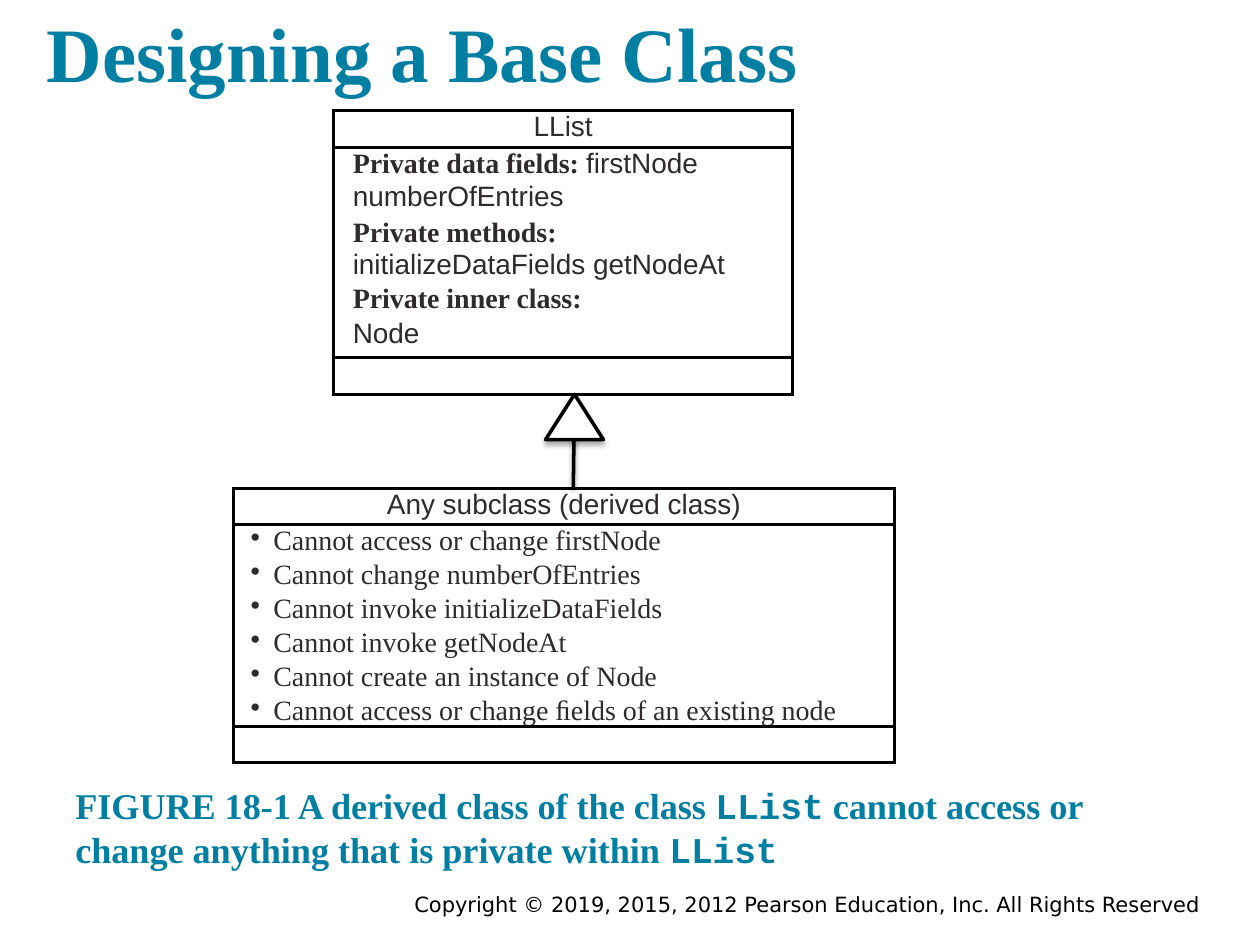
from lxml.etree import SubElement
from pptx import Presentation
from pptx.dml.color import RGBColor
from pptx.enum.shapes import MSO_CONNECTOR, MSO_SHAPE
from pptx.enum.text import MSO_ANCHOR, PP_ALIGN
from pptx.oxml.ns import qn
from pptx.util import Inches, Pt

TEAL = RGBColor(0x00, 0x7F, 0xA3)
INK = RGBColor(0x2F, 0x2A, 0x2B)
BLACK = RGBColor(0, 0, 0)
WHITE = RGBColor(0xFF, 0xFF, 0xFF)
SERIF, SANS, MONO = "Times New Roman", "Arial", "Courier New"


def set_font(font, name, size, color, bold=False):
    font.name = name
    font.size = Pt(size)
    font.color.rgb = color
    font.bold = bold


def add_class_box(left, top, width, row_heights, class_name):
    """Add a three-part class box and return the cell for its members."""
    table = slide.shapes.add_table(
        3, 1, Inches(left), Inches(top), Inches(width), Inches(sum(row_heights))
    ).table
    table.first_row = table.horz_banding = False
    for row, height in zip(table.rows, row_heights):
        row.height = Inches(height)
        cell = row.cells[0]
        cell.margin_left = cell.margin_right = Inches(0.07)
        cell.margin_top = cell.margin_bottom = 0
        properties = cell._tc.get_or_add_tcPr()
        for side in ("a:lnL", "a:lnR", "a:lnT", "a:lnB"):
            border = SubElement(properties, qn(side), w=str(Pt(2)))
            fill = SubElement(border, qn("a:solidFill"))
            SubElement(fill, qn("a:srgbClr"), val=str(BLACK))
        cell.fill.background()
        set_font(cell.text_frame.paragraphs[0].font, SANS, 16, INK)
    heading = table.cell(0, 0).text_frame.paragraphs[0]
    heading.text = class_name
    heading.alignment = PP_ALIGN.CENTER
    return table.cell(1, 0)


presentation = Presentation()
presentation.slide_width = Inches(10)
presentation.slide_height = Inches(7.5)
slide = presentation.slides.add_slide(presentation.slide_layouts[5])

# Title
title = slide.shapes.title
title.left, title.top = Inches(0.27), Inches(0)
title.width, title.height = Inches(9.31), Inches(0.88)
title_frame = title.text_frame
title_frame.text = "Designing a Base Class"
title_frame.vertical_anchor = MSO_ANCHOR.BOTTOM
title_frame.margin_left = title_frame.margin_right = Inches(0.1)
title_frame.margin_top = title_frame.margin_bottom = Inches(0.1)
title_frame.paragraphs[0].alignment = PP_ALIGN.LEFT
set_font(title_frame.paragraphs[0].font, SERIF, 44, TEAL, True)

# Base class with its private members
base_members = add_class_box(2.65, 0.88, 3.64, (0.29, 1.67, 0.29), "LList")
private_members = [
    [("Private data fields: ", True), ("firstNode numberOfEntries", False)],
    [("Private methods: ", True), ("initializeDataFields getNodeAt", False)],
    [("Private inner class:", True)],
    [("Node", False)],
]
for index, parts in enumerate(private_members):
    frame = base_members.text_frame
    member = frame.add_paragraph() if index else frame.paragraphs[0]
    member._p.get_or_add_pPr().set("marL", str(Inches(0.08)))
    if index:
        member.space_before = Pt(2)
    if len(parts) == 2:
        member.line_spacing = 1.04
    for text, is_label in parts:
        run = member.add_run()
        run.text = text
        set_font(run.font, SERIF if is_label else SANS, 16, INK, is_label)

# Derived class with its restrictions
derived_members = add_class_box(
    1.85, 3.88, 5.25, (0.28, 1.59, 0.28), "Any subclass (derived class)"
)
restrictions = [
    "Cannot access or change firstNode",
    "Cannot change numberOfEntries",
    "Cannot invoke initializeDataFields",
    "Cannot invoke getNodeAt",
    "Cannot create an instance of Node",
    "Cannot access or change ﬁelds of an existing node",
]
for index, text in enumerate(restrictions):
    frame = derived_members.text_frame
    restriction = frame.add_paragraph() if index else frame.paragraphs[0]
    restriction.text = text
    restriction.line_spacing = 1.04
    if index:
        restriction.space_before = Pt(1)
    layout = restriction._p.get_or_add_pPr()
    layout.set("marL", str(Inches(0.25)))
    layout.set("indent", str(Inches(-0.18)))
    for default_font in layout.findall(qn("a:defRPr")):
        layout.remove(default_font)
    SubElement(layout, qn("a:buChar"), char="•")
    set_font(restriction.font, SERIF, 16, INK)

# Inheritance arrow, keeping the soft theme shadow
stem = slide.shapes.add_connector(
    MSO_CONNECTOR.STRAIGHT, Inches(4.55), Inches(3.87), Inches(4.56), Inches(3.15)
)
arrowhead = slide.shapes.add_shape(
    MSO_SHAPE.ISOSCELES_TRIANGLE, Inches(4.33), Inches(3.13), Inches(0.46), Inches(0.36)
)
arrowhead.fill.solid()
arrowhead.fill.fore_color.rgb = WHITE
for part in (stem, arrowhead):
    part.line.color.rgb = BLACK
    part.line.width = Pt(2)

# Figure caption
caption = slide.shapes.add_textbox(
    Inches(0.5), Inches(6.13), Inches(9), Inches(0.88)
).text_frame
caption.word_wrap = True
caption.vertical_anchor = MSO_ANCHOR.BOTTOM
caption.margin_top = caption.margin_bottom = Inches(0.1)
for text, font_name in [
    ("FIGURE 18-1 A derived class of the class ", SERIF),
    ("LList", MONO),
    (" cannot access or change anything that is private within ", SERIF),
    ("LList", MONO),
]:
    run = caption.paragraphs[0].add_run()
    run.text = text
    set_font(run.font, font_name, 20.7, TEAL, True)

# Copyright line
copyright_frame = slide.shapes.add_textbox(
    Inches(1.75), Inches(7.03), Inches(7.83), Inches(0.31)
).text_frame
copyright_frame.word_wrap = True
copyright_frame.margin_left = copyright_frame.margin_right = Inches(0.05)
copyright_line = copyright_frame.paragraphs[0]
copyright_line.text = (
    "Copyright © 2019, 2015, 2012 Pearson Education, Inc. All Rights Reserved"
)
copyright_line.alignment = PP_ALIGN.RIGHT
set_font(copyright_line.font, "DejaVu Sans", 12, BLACK)

presentation.save("out.pptx")
